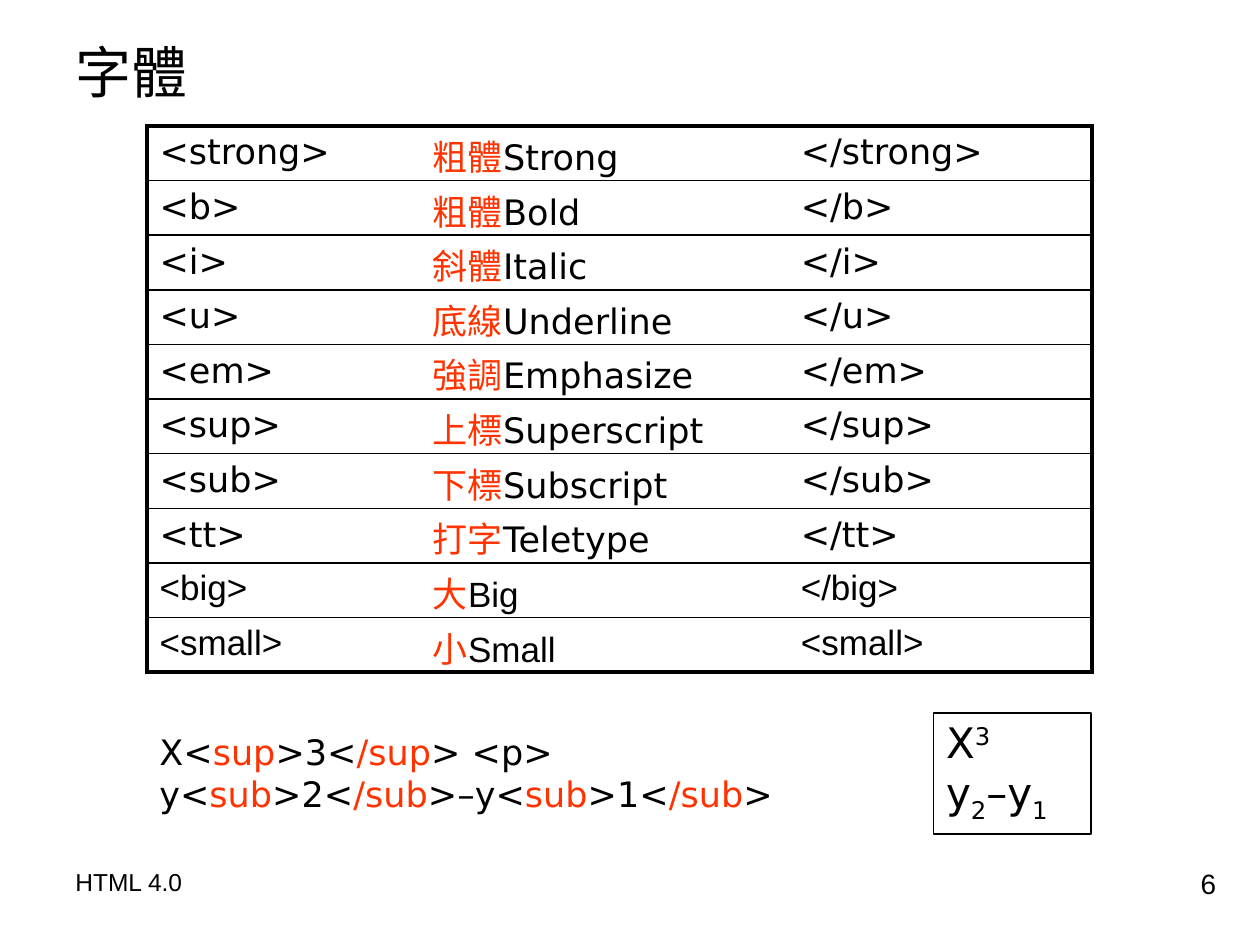
from dataclasses import dataclass
from typing import NamedTuple

from lxml import etree
from pptx import Presentation
from pptx import util as u
from pptx.dml.color import RGBColor
from pptx.enum import shapes, text
from pptx.oxml.ns import qn


@dataclass(frozen=True)
class Theme:
    ink: RGBColor = RGBColor(0x00, 0x00, 0x00)
    accent: RGBColor = RGBColor(0xFF, 0x33, 0x00)
    sans: str = "Arial"
    code: str = "DejaVu Sans"
    title: int = 32
    result: int = 24
    body: int = 20
    number: int = 16
    footer: int = 14
    thick: float = 2.25
    thin: float = 1


class Piece(NamedTuple):
    text: str
    accent: bool = False
    baseline: int = 0


class Tag(NamedTuple):
    opening: str
    chinese: str
    english: str
    closing: str
    font: str


class Box(NamedTuple):
    left: float
    top: float
    width: float
    height: float

    def lengths(self) -> list:
        return [u.Inches(value) for value in self]


THEME = Theme()
TAGS = [
    Tag("<strong>", "粗體", "Strong", "</strong>", THEME.code),
    Tag("<b>", "粗體", "Bold", "</b>", THEME.code),
    Tag("<i>", "斜體", "Italic", "</i>", THEME.code),
    Tag("<u>", "底線", "Underline", "</u>", THEME.code),
    Tag("<em>", "強調", "Emphasize", "</em>", THEME.code),
    Tag("<sup>", "上標", "Superscript", "</sup>", THEME.code),
    Tag("<sub>", "下標", "Subscript", "</sub>", THEME.code),
    Tag("<tt>", "打字", "Teletype", "</tt>", THEME.code),
    Tag("<big>", "大", "Big", "</big>", THEME.sans),
    Tag("<small>", "小", "Small", "<small>", THEME.sans),
]
CONTENT_LEFT = 7 / 6
COLUMN_WIDTHS = (2.17, 2.92, 2.41)
CELL_TOP_MARGINS = (0.05, 0.03, 0.05)  # the taller Chinese lines need the room
TABLE_BOX = Box(CONTENT_LEFT, 1, 7.5, 4.33)


def markup(source: str) -> list[Piece]:
    """Split on "|": every second part is accented."""
    return [Piece(part, index % 2 == 1) for index, part in enumerate(source.split("|"))]


def write(frame, lines: list[list[Piece]], size: int, font: str) -> None:
    for index, pieces in enumerate(lines):
        paragraph = frame.add_paragraph() if index else frame.paragraphs[0]
        paragraph.alignment = text.PP_ALIGN.LEFT
        for piece in pieces:
            run = paragraph.add_run()
            run.text = piece.text
            run.font.size = u.Pt(size)
            run.font.name = font
            run.font.color.rgb = THEME.accent if piece.accent else THEME.ink
            if piece.baseline:
                run.font._element.set("baseline", str(piece.baseline * 1000))


def add_text(slide, box: Box, lines: list[list[Piece]], size: int, font: str):
    frame = slide.shapes.add_textbox(*box.lengths()).text_frame
    frame.word_wrap = True
    write(frame, lines, size, font)
    return frame


def set_borders(cell, widths: dict[str, float]) -> None:
    """Draw the named sides (L, R, T, B) and hide those of zero width."""
    properties = cell._tc.get_or_add_tcPr()
    for index, (side, width) in enumerate(widths.items()):
        line = etree.Element(qn(f"a:ln{side}"), w=str(u.Pt(width)))
        if width:
            fill = etree.SubElement(line, qn("a:solidFill"))
            etree.SubElement(fill, qn("a:srgbClr"), val=str(THEME.ink))
        else:
            etree.SubElement(line, qn("a:noFill"))
        properties.insert(index, line)


def add_tag_table(slide) -> None:
    frame = slide.shapes.add_table(len(TAGS), len(COLUMN_WIDTHS), *TABLE_BOX.lengths())
    table = frame.table
    table.first_row = table.horz_banding = False
    for column, width in zip(table.columns, COLUMN_WIDTHS):
        column.width = u.Inches(width)
    last_row, last_column = len(TAGS) - 1, len(COLUMN_WIDTHS) - 1
    for row, tag in enumerate(TAGS):
        table.rows[row].height = u.Inches(TABLE_BOX.height / len(TAGS))
        contents = (
            [Piece(tag.opening)],
            [Piece(tag.chinese, True), Piece(tag.english)],
            [Piece(tag.closing)],
        )
        for column, pieces in enumerate(contents):
            cell = table.cell(row, column)
            cell.fill.background()
            cell.margin_top = u.Inches(CELL_TOP_MARGINS[column])
            cell.margin_bottom = 0
            write(cell.text_frame, [pieces], THEME.body, tag.font)
            set_borders(cell, {
                "L": THEME.thick if column == 0 else 0,
                "R": THEME.thick if column == last_column else 0,
                "T": THEME.thick if row == 0 else THEME.thin,
                "B": THEME.thick if row == last_row else THEME.thin,
            })


def add_title(slide) -> None:
    title = slide.shapes.title
    title.left, title.top, title.width, title.height = Box(0.5, 0.25, 1.09, 0.63).lengths()
    frame = title.text_frame
    frame.word_wrap = False
    frame.vertical_anchor = text.MSO_ANCHOR.TOP
    write(frame, [[Piece("字體")]], THEME.title, THEME.sans)


def add_result(slide) -> None:
    shape = slide.shapes.add_shape(
        shapes.MSO_SHAPE.RECTANGLE, *Box(7.41, 5.66, 1.25, 0.96).lengths())
    shape.shadow.inherit = False
    shape.fill.background()
    shape.line.color.rgb = THEME.ink
    shape.line.width = u.Pt(0.75)
    frame = shape.text_frame
    frame.word_wrap = True
    frame.vertical_anchor = text.MSO_ANCHOR.MIDDLE
    frame.margin_bottom = u.Inches(0.1)
    write(frame, [
        [Piece("X"), Piece("3", baseline=30)],
        [Piece("y"), Piece("2", baseline=-25), Piece("–y"), Piece("1", baseline=-25)],
    ], THEME.result, THEME.code)


def main() -> None:
    presentation = Presentation()
    presentation.slide_width, presentation.slide_height = u.Inches(10), u.Inches(7.5)
    slide = presentation.slides.add_slide(presentation.slide_layouts[5])

    add_title(slide)
    add_tag_table(slide)
    example = add_text(slide, Box(CONTENT_LEFT, 5.75, 5.33, 0.77), [
        markup("X<|sup|>3<|/sup|> <p>"),
        markup("y<|sub|>2<|/sub|>–y<|sub|>1<|/sub|>"),
    ], THEME.body, THEME.code)
    example.vertical_anchor = text.MSO_ANCHOR.MIDDLE
    add_result(slide)

    add_text(slide, Box(0.5, 6.83, 2.33, 0.52), [[Piece("HTML 4.0")]], THEME.footer, THEME.sans)
    number = add_text(slide, Box(7.42, 6.83, 2.33, 0.52), [[Piece("6")]], THEME.number, THEME.sans)
    number.paragraphs[0].alignment = text.PP_ALIGN.RIGHT
    presentation.save("out.pptx")


if __name__ == "__main__":
    main()
